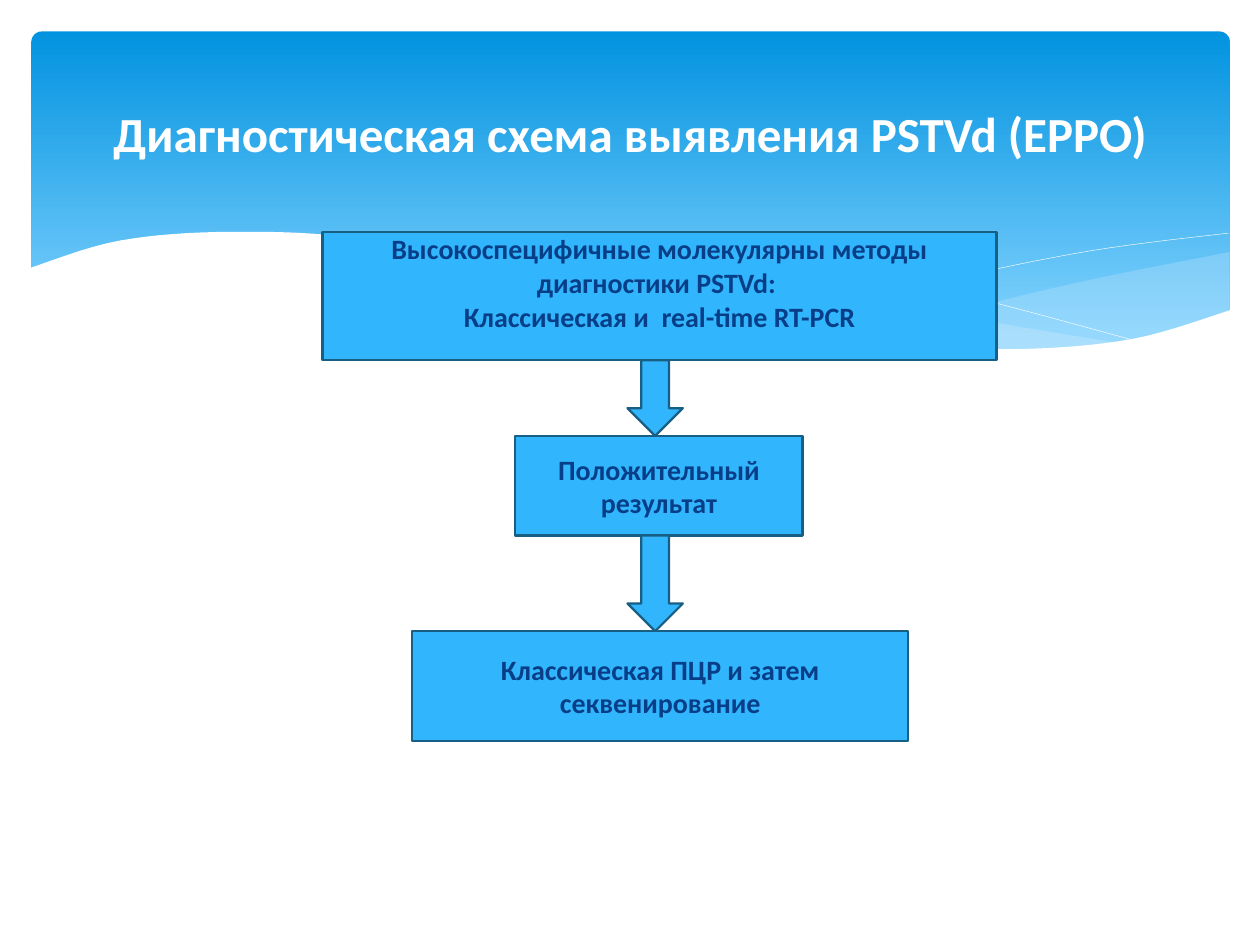
from dataclasses import dataclass

from lxml.etree import SubElement
from pptx import Presentation
from pptx.dml.color import RGBColor
from pptx.enum.shapes import MSO_SHAPE as Preset
from pptx.enum.text import MSO_ANCHOR as Anchor, PP_ALIGN as Align
from pptx.oxml.ns import qn
from pptx.util import Inches, Pt

COLORS = {
    "sky_top": "0293E0",
    "sky_bottom": "83D3FE",
    "mist": "C6E7FC",
    "white": "FFFFFF",
    "step": "31B6FD",
    "outline": "195F84",
    "text": "073E87",
}
Points = list[tuple[float, float]]


@dataclass
class Ribbon:
    upper: Points
    lower: Points
    fill: str
    opacity: int = 100


@dataclass
class Step:
    left: float
    top: float
    width: float
    height: float
    lines: list[str]
    anchor: Anchor = Anchor.MIDDLE
    inset: float = 0.05

    @property
    def bottom(self) -> float:
        return self.top + self.height


RIGHT_MIST = Ribbon(
    upper=[(6.61, 2.65), (7.53, 2.48), (8.61, 2.23), (9.76, 2)],
    lower=[(6.61, 2.65), (7.32, 2.74), (8.03, 2.78), (8.89, 2.72), (9.76, 2.47)],
    fill="mist", opacity=29)
CENTER_MIST = Ribbon(
    upper=[(2.86, 1.91), (3.61, 1.85), (4.42, 1.89), (5.41, 2.03), (7.41, 2.47), (8.93, 2.73)],
    lower=[(2.86, 1.91), (4.49, 2.22), (5.84, 2.52), (6.95, 2.7), (8.07, 2.78), (8.93, 2.73)],
    fill="mist", opacity=40)
WHITE_FRONT = Ribbon(
    upper=[(0.23, 2.13), (0.95, 1.91), (1.85, 1.84), (2.92, 1.9), (4.47, 2.2),
           (6.03, 2.54), (7.26, 2.72), (8.09, 2.77), (8.99, 2.69), (9.77, 2.46)],
    lower=[(0.23, 3.29), (9.77, 3.29)],
    fill="white")
FALLING_THREAD = [(3.09, 1.95), (4.01, 1.87), (5.1, 1.92), (6.36, 2.08), (7.6, 2.33), (9.07, 2.72)]
RISING_THREAD = [(6.13, 2.57), (7.48, 2.23), (8.66, 1.99), (9.75, 1.85)]

STEPS = [
    Step(2.56, 1.84, 5.35, 1.02,
         ["Высокоспецифичные молекулярны методы диагностики PSTVd: ",
          "Классическая и  real-time RT-PCR"], Anchor.TOP, 0),
    Step(4.09, 3.46, 2.28, 0.79, ["Положительный результат"]),
    Step(3.27, 5.01, 3.94, 0.87, ["Классическая ПЦР и затем секвенирование"]),
]
ARROW_LEFT, ARROW_WIDTH = 4.98, 0.44


def color(key: str) -> RGBColor:
    return RGBColor.from_string(COLORS[key])


def paint(shape, fill: str) -> None:
    shape.fill.solid()
    shape.fill.fore_color.rgb = color(fill)


def catmull_rom(before: float, start: float, end: float, after: float, t: float) -> float:
    return start + t / 2 * (
        end - before
        + t * (2 * before - 5 * start + 4 * end - after)
        + t * t * (3 * (start - end) + after - before))


def smooth(knots: Points, pieces: int = 8) -> Points:
    padded = [knots[0], *knots, knots[-1]]
    spans = zip(padded, padded[1:], padded[2:], padded[3:])
    curve = [tuple(catmull_rom(*axis, piece / pieces) for axis in zip(*span))
             for span in spans for piece in range(pieces)]
    return [*curve, knots[-1]]


def draw_outline(shapes, points: Points, close: bool):
    start, *rest = [(Inches(x), Inches(y)) for x, y in points]
    builder = shapes.build_freeform(*start)
    builder.add_line_segments(rest, close=close)
    outline = builder.convert_to_shape()
    outline.shadow.inherit = False
    return outline


def draw_ribbon(shapes, ribbon: Ribbon) -> None:
    edge = smooth(ribbon.upper) + smooth(ribbon.lower)[::-1]
    band = draw_outline(shapes, edge, close=True)
    paint(band, ribbon.fill)
    band.line.fill.background()
    if ribbon.opacity < 100:
        tint = band.fill._xPr.find(qn("a:solidFill"))[0]
        SubElement(tint, qn("a:alpha")).set("val", str(ribbon.opacity * 1000))


def draw_thread(shapes, knots: Points) -> None:
    thread = draw_outline(shapes, smooth(knots), close=False)
    thread.fill.background()
    thread.line.color.rgb = color("white")
    thread.line.width = Pt(0.25)


def draw_banner(shapes) -> None:
    banner = shapes.add_shape(Preset.ROUNDED_RECTANGLE, Inches(0.25), Inches(0.25),
                              Inches(9.51), Inches(2.7))
    banner.adjustments[0] = 0.03
    banner.shadow.inherit = False
    banner.line.fill.background()
    banner.fill.gradient()
    banner.fill.gradient_angle = 270
    stops = [(0, "sky_top"), (0.9, "sky_bottom")]
    for stop, (position, key) in zip(banner.fill.gradient_stops, stops):
        stop.position = position
        stop.color.rgb = color(key)


def write(shape, lines: list[str], size: int, key: str,
          anchor: Anchor = Anchor.MIDDLE, inset: float = 0.05) -> None:
    frame = shape.text_frame
    frame_format = {"word_wrap": True, "vertical_anchor": anchor,
                    "margin_top": Inches(inset), "margin_bottom": Inches(inset)}
    for name, value in frame_format.items():
        setattr(frame, name, value)
    frame.text = "\n".join(lines)
    font_format = {"name": "Calibri", "size": Pt(size), "bold": True}
    for paragraph in frame.paragraphs:
        paragraph.alignment = Align.CENTER
        for run in paragraph.runs:
            for name, value in font_format.items():
                setattr(run.font, name, value)
            run.font.color.rgb = color(key)


def draw_block(shapes, preset: Preset, left: float, top: float,
               width: float, height: float):
    block = shapes.add_shape(preset, Inches(left), Inches(top),
                             Inches(width), Inches(height))
    block.shadow.inherit = False
    paint(block, "step")
    block.line.color.rgb = color("outline")
    block.line.width = Pt(1.25)
    return block


def draw_step(shapes, step: Step) -> None:
    block = draw_block(shapes, Preset.RECTANGLE, step.left, step.top,
                       step.width, step.height)
    write(block, step.lines, 16, "text", step.anchor, step.inset)


def draw_arrow(shapes, upper: Step, lower: Step) -> None:
    draw_block(shapes, Preset.DOWN_ARROW, ARROW_LEFT, upper.bottom,
               ARROW_WIDTH, lower.top - upper.bottom)


def main() -> None:
    deck = Presentation()
    deck.slide_width, deck.slide_height = Inches(10), Inches(7.5)
    shapes = deck.slides.add_slide(deck.slide_layouts[6]).shapes
    draw_banner(shapes)
    for mist in (RIGHT_MIST, CENTER_MIST):
        draw_ribbon(shapes, mist)
    for thread in (FALLING_THREAD, RISING_THREAD):
        draw_thread(shapes, thread)
    draw_ribbon(shapes, WHITE_FRONT)
    title = shapes.add_textbox(Inches(0.5), Inches(0.37), Inches(9), Inches(1.37))
    write(title, ["Диагностическая схема выявления PSTVd (EPPO)"], 28, "white")
    for step in STEPS:
        draw_step(shapes, step)
    for upper, lower in zip(STEPS, STEPS[1:]):
        draw_arrow(shapes, upper, lower)
    deck.save("out.pptx")


if __name__ == "__main__":
    main()
